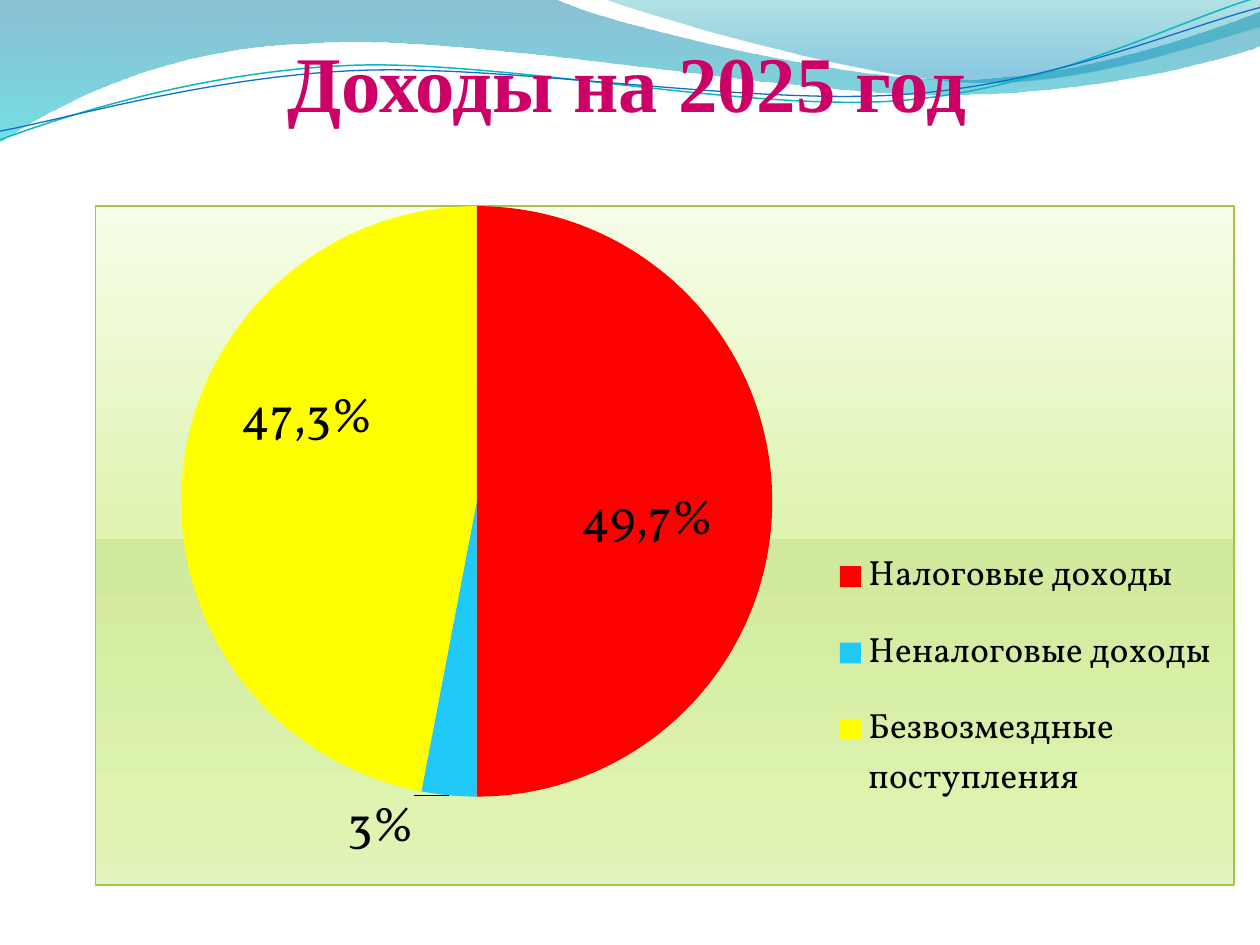
from dataclasses import dataclass
from typing import NamedTuple

from lxml import etree
from pptx import Presentation
from pptx.chart.data import CategoryChartData
from pptx.dml.color import RGBColor
from pptx.enum.chart import XL_CHART_TYPE as ChartType
from pptx.enum.chart import XL_LABEL_POSITION as LabelPosition
from pptx.enum.chart import XL_LEGEND_POSITION as LegendPosition
from pptx.enum.text import MSO_ANCHOR as Anchor
from pptx.enum.text import PP_ALIGN as Align
from pptx.oxml import parse_xml
from pptx.oxml.ns import nsdecls, qn
from pptx.util import Inches, Pt


@dataclass(frozen=True)
class Theme:
    title_font: str = "Times New Roman"
    chart_font: str = "Vollkorn"
    title_color: str = "CC0066"
    text_color: str = "000000"
    border_color: str = "A5C249"
    title_size: int = 45
    label_size: int = 28
    legend_size: int = 20


class Stop(NamedTuple):
    position: int
    color: str
    opacity: int = 100


@dataclass(frozen=True)
class Wave:
    start: tuple
    segments: list  # one point makes a line, three make a cubic curve
    stops: tuple = ()
    line_color: str = ""
    line_width: float = 0


class Slice(NamedTuple):
    category: str
    value: int
    label: str
    color: str
    position: LabelPosition
    shift: tuple


THEME = Theme()

WAVES = [
    Wave((0, 0), [[(4.4, -0.01)], [(4.76, 0.17), (6.64, 0.63), (7.58, 0.63)],
                  [(8.53, 0.63), (9.58, 0.26), (10, 0.09)], [(10.01, 0.36)],
                  [(9.83, 0.44), (8.7, 0.76), (7.46, 0.75)],
                  [(6.22, 0.75), (3.82, 0.28), (2.57, 0.34)],
                  [(1.29, 0.36), (0.46, 0.83), (-0.01, 1.13)]],
         stops=(Stop(0, "0074A1", 45), Stop(100, "00C6CF", 55))),
    Wave((4.79, -0.01), [[(5.09, 0.11), (6.82, 0.62), (7.69, 0.65)],
                         [(8.56, 0.69), (9.61, 0.32), (10, 0.21)], [(10, 0)]],
         stops=(Stop(0, "00A1A9", 30), Stop(80, "008BBF", 45))),
    Wave((0, 1.11), [[(0.48, 0.93), (1.58, 0.57), (2.77, 0.52)],
                     [(3.95, 0.47), (5.93, 0.89), (7.13, 0.8)],
                     [(8.33, 0.71), (9.38, 0.15), (9.98, -0.02)]],
         line_color="0AB8BF", line_width=0.85),
    Wave((0, 1.04), [[(0.47, 0.96), (1.64, 0.61), (2.83, 0.56)],
                     [(4.03, 0.51), (5.97, 0.84), (7.17, 0.75)],
                     [(8.36, 0.67), (9.41, 0.21), (10, 0.06)]],
         line_color="0F6FC6", line_width=0.75),
]

SLICES = [
    Slice("Налоговые доходы", 50, "49,7%", "FF0000", LabelPosition.CENTER, (0.02, 0.03)),
    Slice("Неналоговые доходы", 3, "3%", "20C9F8", LabelPosition.OUTSIDE_END, (-0.03, -0.01)),
    Slice("Безвозмездные поступления", 47, "47,3%", "FFFF00", LabelPosition.CENTER, (-0.02, -0.1)),
]

CHART_STOPS = (Stop(0, "F6FDE8"), Stop(49, "DEF4B0"), Stop(49, "D1E99C"),
               Stop(92, "DEF4B0"), Stop(100, "E2F4BF"))


def gradient_xml(stops: tuple) -> str:
    """Vertical gradient, from top to bottom."""
    marks = "".join(
        f'<a:gs pos="{stop.position * 1000}"><a:srgbClr val="{stop.color}">'
        f'<a:alpha val="{stop.opacity * 1000}"/></a:srgbClr></a:gs>' for stop in stops)
    return (f'<a:gradFill {nsdecls("a")} rotWithShape="1"><a:gsLst>{marks}</a:gsLst>'
            '<a:lin ang="5400000" scaled="0"/></a:gradFill>')


def format_font(font, *, name: str, size: float, color: str, bold: bool = False) -> None:
    font.name, font.size, font.bold = name, Pt(size), bold
    font.color.rgb = RGBColor.from_string(color)


def bend_segments(shape, segments: list) -> None:
    """Turn each run of three straight steps into one cubic curve."""
    steps = iter(list(shape.element.iter(qn("a:lnTo"))))
    for segment in segments:
        parts = [next(steps) for _ in segment]
        if len(parts) == 3:
            curve = etree.Element(qn("a:cubicBezTo"))
            parts[0].addprevious(curve)
            for part in parts:
                curve.append(part[0])
                part.getparent().remove(part)


def draw_wave(slide, wave: Wave) -> None:
    points = [(Inches(x), Inches(y)) for segment in wave.segments for x, y in segment]
    builder = slide.shapes.build_freeform(*map(Inches, wave.start), scale=1.0)
    builder.add_line_segments(points, close=bool(wave.stops))
    shape = builder.convert_to_shape()
    bend_segments(shape, wave.segments)
    shape.shadow.inherit = False
    shape.fill.background()
    if wave.stops:
        shape.line.fill.background()
        properties = shape.element.spPr
        properties.replace(properties.find(qn("a:noFill")), parse_xml(gradient_xml(wave.stops)))
    else:
        shape.line.color.rgb = RGBColor.from_string(wave.line_color)
        shape.line.width = Pt(wave.line_width)


def draw_title(slide, text: str) -> None:
    title = slide.shapes.title
    title.left, title.top, title.width, title.height = map(Inches, (0.5, 0.35, 8.95, 0.67))
    frame = title.text_frame
    frame.margin_left = frame.margin_right = frame.margin_bottom = 0
    frame.margin_top = Inches(0.05)
    frame.vertical_anchor = Anchor.BOTTOM
    paragraph = frame.paragraphs[0]
    paragraph.alignment = Align.CENTER
    run = paragraph.add_run()
    run.text = text
    format_font(run.font, name=THEME.title_font, size=THEME.title_size,
                color=THEME.title_color, bold=True)
    # Bring the title in front of the waves
    title.element.getparent().append(title.element)


def set_layout(parent, index: int, **values) -> None:
    """Give a chart part a manual layout."""
    for old in parent.findall(qn("c:layout")):
        parent.remove(old)
    layout = etree.Element(qn("c:layout"))
    manual = etree.SubElement(layout, qn("c:manualLayout"))
    for name, value in values.items():
        etree.SubElement(manual, qn(f"c:{name}")).set("val", str(value))
    parent.insert(index, layout)


def draw_chart(slide) -> None:
    data = CategoryChartData()
    data.categories = [part.category for part in SLICES]
    data.add_series("Series 1", [part.value for part in SLICES])
    box = map(Inches, (0.75, 1.63, 9.05, 5.4))
    chart = slide.shapes.add_chart(ChartType.PIE, *box, data).chart
    chart.has_title = False
    format_font(chart.font, name=THEME.chart_font, size=10, color=THEME.text_color)

    # Slices and their labels
    plot = chart.plots[0]
    plot.vary_by_categories = False
    series = plot.series[0]
    for point_index, part in enumerate(SLICES):
        point = series.points[point_index]
        point.format.fill.solid()
        point.format.fill.fore_color.rgb = RGBColor.from_string(part.color)
        point.format.line.fill.background()
        run = point.data_label.text_frame.paragraphs[0].add_run()
        run.text = part.label
        format_font(run.font, name=THEME.chart_font, size=THEME.label_size, color=THEME.text_color)
        point.data_label.position = part.position
    for label, part in zip(chart.element.iter(qn("c:dLbl")), SLICES):
        set_layout(label, 1, x=part.shift[0], y=part.shift[1])
    series.data_labels.show_value = False
    series.data_labels.show_percentage = True

    # Legend and plot area
    chart.has_legend = True
    legend = chart.legend
    legend.position = LegendPosition.RIGHT
    legend.include_in_layout = False
    format_font(legend.font, name=THEME.chart_font, size=THEME.legend_size, color=THEME.text_color)
    edges = {"xMode": "edge", "yMode": "edge"}
    set_layout(chart.element.find(".//" + qn("c:legend")), 1, **edges, x=0.67, y=0.47, w=0.33, h=0.45)
    set_layout(chart.element.find(".//" + qn("c:plotArea")), 0, layoutTarget="inner",
               **edges, x=0.02, y=0, w=0.63, h=0.87)

    # Background and border
    chart.element.find(qn("c:chart")).addnext(parse_xml(
        f'<c:spPr {nsdecls("c", "a")}>{gradient_xml(CHART_STOPS)}<a:ln w="{Pt(0.9)}"><a:solidFill>'
        f'<a:srgbClr val="{THEME.border_color}"/></a:solidFill></a:ln></c:spPr>'))


def main() -> None:
    presentation = Presentation()
    presentation.slide_width, presentation.slide_height = Inches(10), Inches(7.5)
    slide = presentation.slides.add_slide(presentation.slide_layouts[5])
    for wave in WAVES:
        draw_wave(slide, wave)
    draw_title(slide, "Доходы на 2025 год")
    draw_chart(slide)
    presentation.save("out.pptx")


if __name__ == "__main__":
    main()
